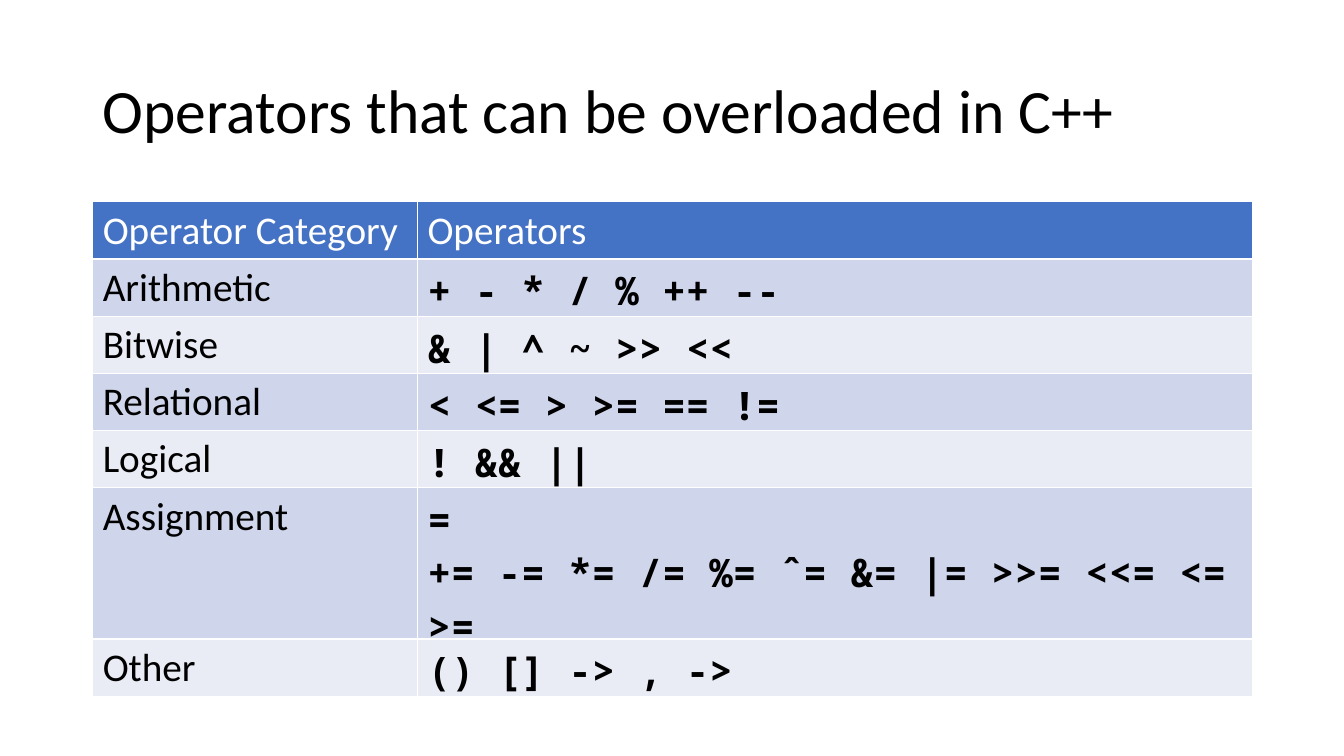
from typing import NamedTuple

from lxml.etree import SubElement
from pptx import Presentation
from pptx.dml.color import RGBColor
from pptx.enum.text import MSO_ANCHOR
from pptx.oxml.ns import qn
from pptx.util import Inches, Pt

SLIDE_WIDTH, SLIDE_HEIGHT = Inches(13.33), Inches(7.5)
SANS, MONO = "Calibri", "Noto Sans Mono"
BLACK, WHITE = "000000", "FFFFFF"
HEADER_FILL, BAND_FILLS = "4472C4", ("CFD5EA", "E9EBF5")

# Shares of the slide's size
LEFT, CONTENT_WIDTH = 0.069, 0.863
TITLE_TOP, TITLE_HEIGHT = 0.053, 0.193
TABLE_TOP, ROW_HEIGHT = 0.267, 0.055
COLUMN_SHARES = (0.28, 0.72)  # of the table's width


class OperatorRow(NamedTuple):
    category: str
    operators: str


HEADER = OperatorRow("Operator Category", "Operators")
OPERATOR_ROWS = [
    OperatorRow("Arithmetic", "+ - * / % ++ --"),
    OperatorRow("Bitwise", "& | ^ ~ >> <<"),
    OperatorRow("Relational", "< <= > >= == !="),
    OperatorRow("Logical", "! && ||"),
    OperatorRow("Assignment", "=\n+= -= *= /= %= ˆ= &= |= >>= <<= <= >="),
    OperatorRow("Other", "() [] -> , ->"),
]


def across(share: float) -> int:
    return round(SLIDE_WIDTH * share)


def down(share: float) -> int:
    return round(SLIDE_HEIGHT * share)


def colour(value: str) -> RGBColor:
    return RGBColor.from_string(value)


def write_text(frame, text: str, *, size: float = 28, font: str = SANS,
               text_colour: str = BLACK, bold: bool = False,
               line_spacing: float | None = None) -> None:
    """Fill a text frame, one paragraph for each line of the text."""
    frame.text = text
    for paragraph in frame.paragraphs:
        paragraph.line_spacing = line_spacing
        for run in paragraph.runs:
            run.font.name = font
            run.font.size = Pt(size)
            run.font.bold = bold
            run.font.color.rgb = colour(text_colour)


def add_borders(cell, line_colour: str = WHITE, width: float = 1) -> None:
    properties = cell._tc.get_or_add_tcPr()
    for position, side in enumerate(("a:lnL", "a:lnR", "a:lnT", "a:lnB")):
        line = SubElement(properties, qn(side), w=str(Pt(width)))
        fill = SubElement(line, qn("a:solidFill"))
        SubElement(fill, qn("a:srgbClr"), val=line_colour)
        properties.insert(position, line)  # borders come before the fill


def style_cell(cell, fill: str) -> None:
    cell.fill.solid()
    cell.fill.fore_color.rgb = colour(fill)
    add_borders(cell)


def add_title(slide, text: str) -> None:
    title = slide.shapes.add_textbox(across(LEFT), down(TITLE_TOP),
                                     across(CONTENT_WIDTH), down(TITLE_HEIGHT))
    frame = title.text_frame
    frame.word_wrap = True
    frame.vertical_anchor = MSO_ANCHOR.MIDDLE
    write_text(frame, text, size=44, line_spacing=0.9)


def add_operator_table(slide) -> None:
    rows = [HEADER, *OPERATOR_ROWS]
    table = slide.shapes.add_table(
        len(rows), len(COLUMN_SHARES), across(LEFT), down(TABLE_TOP),
        across(CONTENT_WIDTH), down(ROW_HEIGHT * len(rows))).table
    for column, share in zip(table.columns, COLUMN_SHARES):
        column.width = across(CONTENT_WIDTH * share)

    for index, row in enumerate(rows):
        category, operators = table.rows[index].cells
        is_header = row is HEADER
        fill = HEADER_FILL if is_header else BAND_FILLS[(index - 1) % 2]
        text_colour = WHITE if is_header else BLACK
        style_cell(category, fill)
        style_cell(operators, fill)
        write_text(category.text_frame, row.category, text_colour=text_colour)
        write_text(operators.text_frame, row.operators, text_colour=text_colour,
                   font=SANS if is_header else MONO, bold=not is_header)


def main() -> None:
    presentation = Presentation()
    presentation.slide_width, presentation.slide_height = SLIDE_WIDTH, SLIDE_HEIGHT
    slide = presentation.slides.add_slide(presentation.slide_layouts[6])
    add_title(slide, "Operators that can be overloaded in C++")
    add_operator_table(slide)
    presentation.save("out.pptx")


if __name__ == "__main__":
    main()
